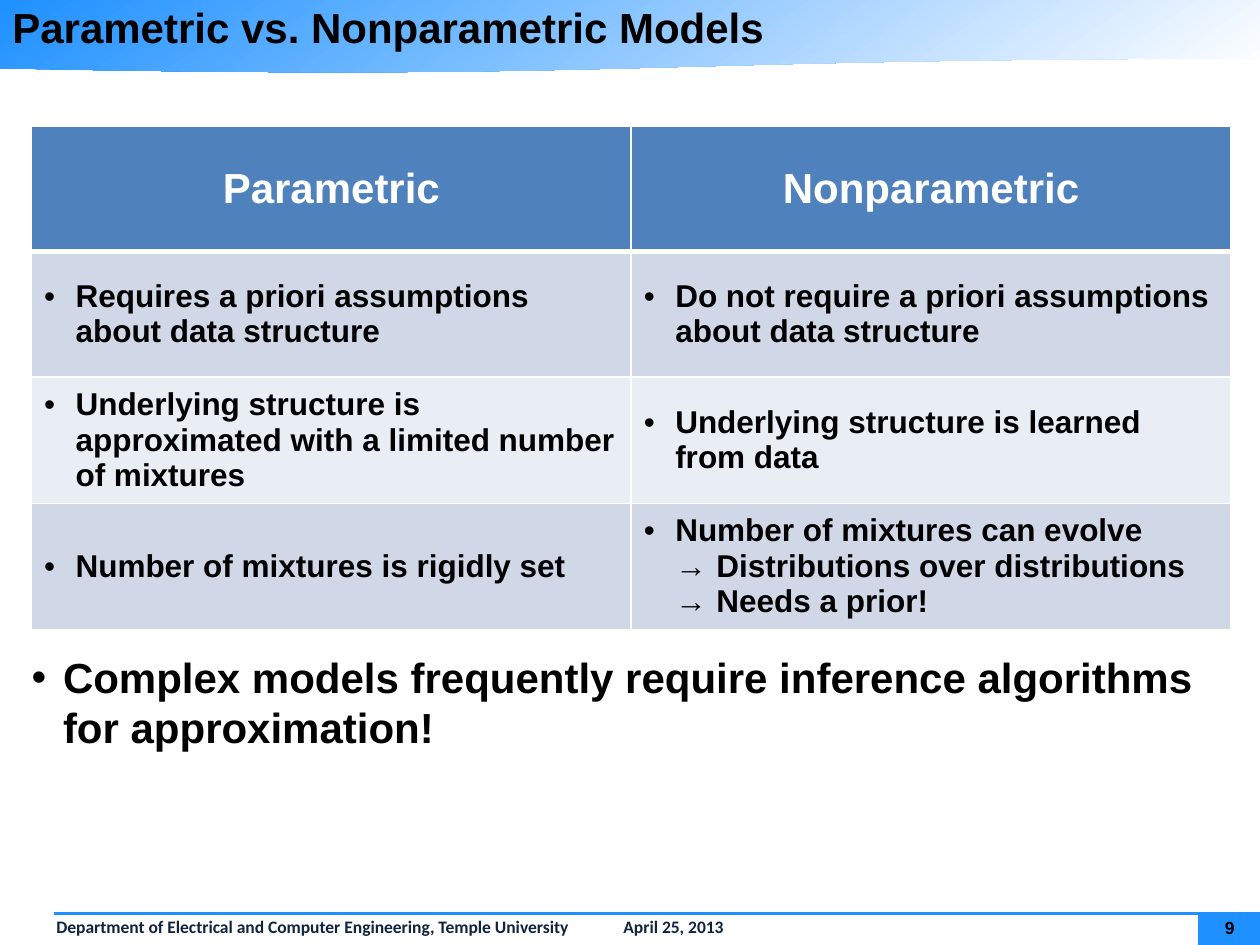
from dataclasses import dataclass

from lxml.etree import SubElement
from pptx import Presentation
from pptx.dml.color import RGBColor
from pptx.enum.shapes import MSO_CONNECTOR, MSO_SHAPE
from pptx.enum.text import MSO_ANCHOR, PP_ALIGN
from pptx.oxml.ns import qn
from pptx.util import Pt

COLORS = {
    "blue": "1E90FF", "white": "FFFFFF", "black": "000000", "navy": "0F243E",
    "header": "4F81BD", "band_dark": "D0D8E8", "band_light": "E9EDF4",
}


@dataclass
class Item:
    text: str
    bullet: str = "•"
    margin: float = 18
    hanging: float = 18


@dataclass
class TextBox:
    left: float
    top: float
    width: float
    height: float
    size: float
    font: str = "Arial"
    color: str = "black"
    inset: bool = True
    middle: bool = False


def rgb(name: str) -> RGBColor:
    return RGBColor.from_string(COLORS[name])


def style(p, size: float, color: str = "black", font: str = "Arial") -> None:
    for r in p.runs:
        r.font.name, r.font.size, r.font.bold = font, Pt(size), True
        r.font.color.rgb = rgb(color)


def set_indent(p, margin: float, first: float):
    pPr = p._p.get_or_add_pPr()
    pPr.set("marL", str(Pt(margin)))
    pPr.set("indent", str(Pt(first)))
    return pPr


def write_items(tf, items: list[Item], size: float) -> None:
    for i, item in enumerate(items):
        p = tf.paragraphs[0] if i == 0 else tf.add_paragraph()
        p.text = item.text
        pPr = set_indent(p, item.margin, -item.hanging)
        SubElement(pPr, qn("a:buFont"), typeface="Arial")
        SubElement(pPr, qn("a:buChar"), char=item.bullet)
        style(p, size)


def add_text(s, box: TextBox, text: str = ""):
    sp = s.shapes.add_textbox(Pt(box.left), Pt(box.top), Pt(box.width), Pt(box.height))
    tf = sp.text_frame
    tf.word_wrap = True
    if not box.inset:
        tf.margin_left = tf.margin_right = tf.margin_top = tf.margin_bottom = 0
    if box.middle:
        tf.vertical_anchor = MSO_ANCHOR.MIDDLE
    tf.text = text
    style(tf.paragraphs[0], box.size, box.color, box.font)
    return tf


def add_block(s, kind, left: float, top: float, width: float, height: float):
    sp = s.shapes.add_shape(kind, Pt(left), Pt(top), Pt(width), Pt(height))
    sp.shadow.inherit = False
    sp.line.fill.background()
    return sp


def style_cell(cell, fill: str, bottom: float) -> None:
    cell.vertical_anchor = MSO_ANCHOR.MIDDLE
    tcPr = cell._tc.get_or_add_tcPr()
    for side, width in (("L", 1), ("R", 1), ("T", 1), ("B", bottom)):
        ln = SubElement(tcPr, qn(f"a:ln{side}"), w=str(Pt(width)))
        SubElement(SubElement(ln, qn("a:solidFill")), qn("a:srgbClr"), val=COLORS["white"])
    cell.fill.solid()
    cell.fill.fore_color.rgb = rgb(fill)


HEADINGS = ["Parametric", "Nonparametric"]
ROWS = [
    [[Item("Requires a priori assumptions about data structure")],
     [Item("Do not require a priori assumptions about data structure")]],
    [[Item("Underlying structure is approximated with a limited number of mixtures")],
     [Item("Underlying structure is learned from data")]],
    [[Item("Number of mixtures is rigidly set")],
     [Item("Number of mixtures can evolve"),
      Item("Distributions over distributions", "→", 41.5, 23.5),
      Item("Needs a prior!", "→", 41.5, 23.5)]],
]


def add_comparison(s) -> None:
    frame = s.shapes.add_table(len(ROWS) + 1, 2, Pt(18), Pt(72), Pt(685.4), Pt(287.2))
    table = frame.table
    for c, heading in enumerate(HEADINGS):
        cell = table.cell(0, c)
        style_cell(cell, "header", 3)
        p = cell.text_frame.paragraphs[0]
        p.text = heading
        p.alignment = PP_ALIGN.CENTER
        style(p, 24, "white")
        for r, row in enumerate(ROWS, start=1):
            cell = table.cell(r, c)
            style_cell(cell, "band_dark" if r % 2 else "band_light", 1)
            write_items(cell.text_frame, row[c], 18)


def main() -> None:
    prs = Presentation()
    prs.slide_width, prs.slide_height = Pt(720), Pt(540)
    s = prs.slides.add_slide(prs.slide_layouts[6])

    # Header band
    band = add_block(s, MSO_SHAPE.FLOWCHART_DOCUMENT, 0, 0, 720.7, 41.8)
    band.fill.gradient()
    band.fill.gradient_angle = 305
    for stop, (position, color) in zip(band.fill.gradient_stops, ((0, "blue"), (1, "white"))):
        stop.position = position
        stop.color.rgb = rgb(color)

    # Footer
    badge = add_block(s, MSO_SHAPE.RECTANGLE, 684.7, 521.3, 36, 18.7)
    badge.fill.solid()
    badge.fill.fore_color.rgb = rgb("blue")
    footer = add_text(
        s, TextBox(2.9, 520.6, 717.8, 18.7, 10, "Calibri", "navy"),
        "Department of Electrical and Computer Engineering, Temple University\tApril 25, 2013")
    p = footer.paragraphs[0]
    p.line_spacing = 0.95
    tabs = SubElement(set_indent(p, 22.3, 0), qn("a:tabLst"))
    SubElement(tabs, qn("a:tab"), pos=str(Pt(670.3)), algn="r")
    rule = s.shapes.add_connector(MSO_CONNECTOR.STRAIGHT, Pt(31), Pt(522), Pt(720), Pt(522))
    rule.line.color.rgb = rgb("blue")
    rule.line.width = Pt(1.5)
    SubElement(rule._element.spPr, qn("a:effectLst"))
    number = add_text(s, TextBox(688.3, 524.2, 28.8, 12.2, 10, inset=False, middle=True), "9")
    number.paragraphs[0].alignment = PP_ALIGN.CENTER

    # Title, comparison table and conclusion
    add_text(s, TextBox(0, 0, 720, 31, 24, middle=True), "Parametric vs. Nonparametric Models")
    add_comparison(s)
    conclusion = add_text(s, TextBox(18, 372.2, 680.4, 58.3, 24, inset=False))
    write_items(conclusion, [Item(
        "Complex models frequently require inference algorithms for approximation!")], 24)

    prs.save("out.pptx")


if __name__ == "__main__":
    main()
